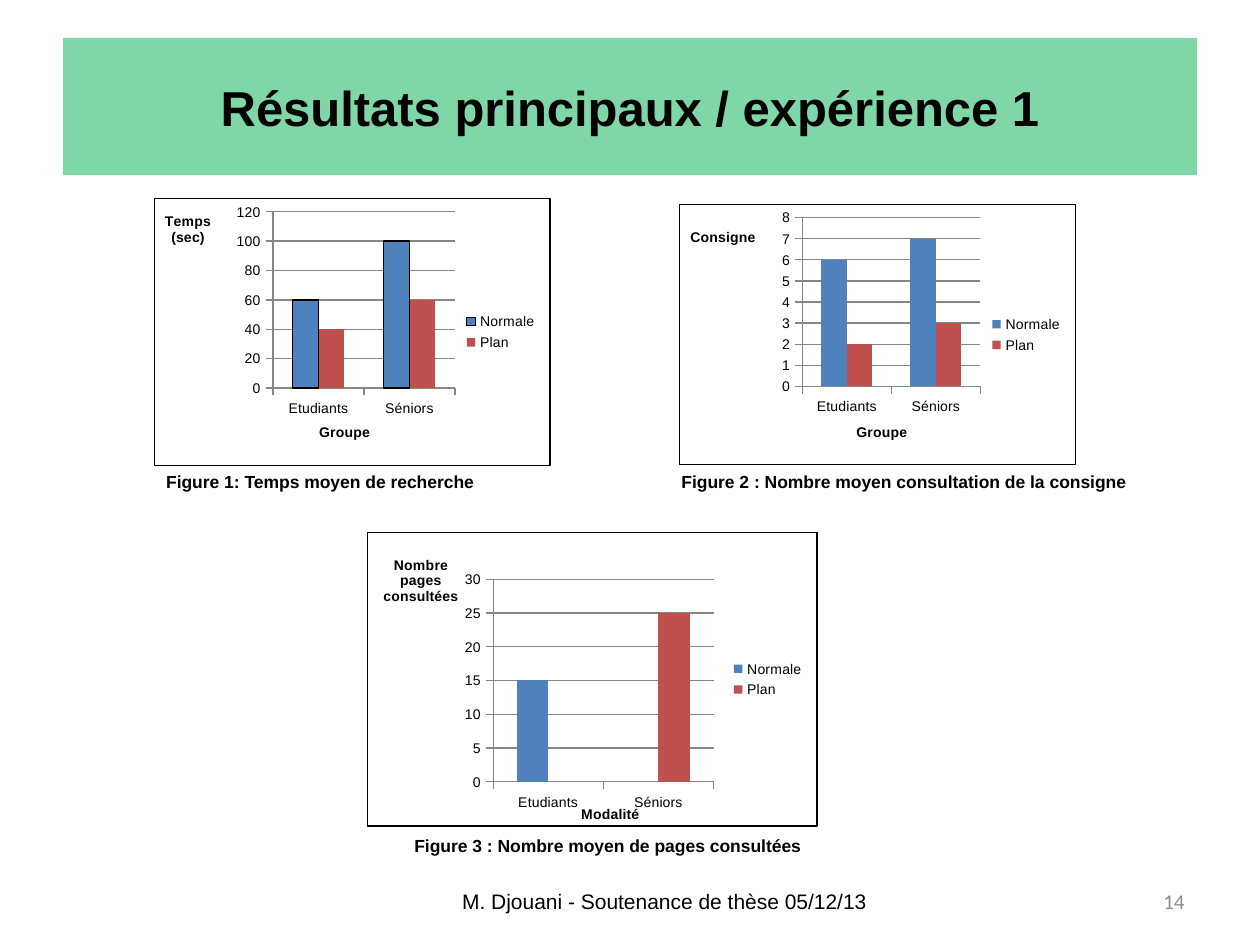
from lxml import etree
from pptx import Presentation
from pptx.chart.data import CategoryChartData
from pptx.dml.color import RGBColor
from pptx.enum.chart import XL_CHART_TYPE, XL_LEGEND_POSITION, XL_TICK_MARK
from pptx.enum.text import MSO_ANCHOR, PP_ALIGN
from pptx.oxml import parse_xml
from pptx.oxml.ns import nsdecls, qn
from pptx.util import Inches, Pt

COLUMNS = XL_CHART_TYPE.COLUMN_CLUSTERED
LEGEND_RIGHT = XL_LEGEND_POSITION.RIGHT
TICK_OUT, TICK_NONE = XL_TICK_MARK.OUTSIDE, XL_TICK_MARK.NONE
TOP, MIDDLE = MSO_ANCHOR.TOP, MSO_ANCHOR.MIDDLE
LEFT, CENTER, RIGHT = PP_ALIGN.LEFT, PP_ALIGN.CENTER, PP_ALIGN.RIGHT

GROUPS = ["Etudiants", "Séniors"]
SERIES_COLORS = {"Normale": "4F81BD", "Plan": "C0504D"}
AXIS_GRAY = "868686"

CHARTS = [
    dict(box=(1.22, 1.57, 3.15, 2.13), values=[(60, 100), (40, 60)],
         plot=(0.3, 0.05, 0.46, 0.66), top=120, step=20, outlined=True,
         value_title=("Temps (sec)", 0.02, 0.04),
         group_title=("Groupe", 0.41, 0.83)),
    dict(box=(5.39, 1.62, 3.15, 2.07), values=[(6, 7), (2, 3)],
         plot=(0.31, 0.05, 0.45, 0.65), top=8, step=1, outlined=False,
         value_title=("Consigne", 0.02, 0.08),
         group_title=("Groupe", 0.44, 0.83)),
    dict(box=(2.91, 4.22, 3.58, 2.34), values=[(15, None), (None, 25)],
         plot=(0.28, 0.16, 0.49, 0.69), top=30, step=5, outlined=False,
         value_title=("Nombre pages consultées", 0.03, 0.07),
         group_title=("Modalité", 0.47, 0.92)),
]

CAPTIONS = [
    ("Figure 1: Temps moyen de recherche", (1.22, 3.69, 3.39, 0.27)),
    ("Figure 2 : Nombre moyen consultation de la consigne",
     (5.31, 3.69, 3.87, 0.27)),
    ("Figure 3 : Nombre moyen de pages consultées",
     (3.19, 6.58, 3.86, 0.27)),
]


def rgb(value):
    return RGBColor.from_string(value)


def set_font(font, color="000000", **values):
    for name, value in {"name": "Arial", **values}.items():
        setattr(font, name, value)
    font.color.rgb = rgb(color)


def set_line(line, color):
    line.color.rgb = rgb(color)
    line.width = Pt(0.75)


def write(tf, text, align, anchor, **font):
    tf.word_wrap = True
    tf.vertical_anchor = anchor
    p = tf.paragraphs[0]
    p.alignment = align
    r = p.add_run()
    r.text = text
    set_font(r.font, **font)


def add_text(s, text, box, align=LEFT, anchor=TOP, **font):
    sp = s.shapes.add_textbox(*map(Inches, box))
    write(sp.text_frame, text, align, anchor, **font)


def format_title(s, text):
    sp = s.shapes.title
    for name, value in zip(("left", "top", "width", "height"),
                           (0.5, 0.3, 9, 1.09)):
        setattr(sp, name, Inches(value))
    sp.fill.solid()
    sp.fill.fore_color.rgb = rgb("00B050")
    color = sp.fill._xPr.find(".//" + qn("a:srgbClr"))
    etree.SubElement(color, qn("a:alpha"), val="50000")
    write(sp.text_frame, text, CENTER, MIDDLE, size=Pt(28), bold=True)


def set_layout(parent, index, x, y, w=None, h=None):
    """Place a chart part by fractions of the chart; w and h mean a plot area."""
    for old in parent.findall(qn("c:layout")):
        parent.remove(old)
    layout = parse_xml(f"<c:layout {nsdecls('c')}/>")
    manual = etree.SubElement(layout, qn("c:manualLayout"))
    values = {"xMode": "edge", "yMode": "edge", "x": x, "y": y}
    if w:
        values = {"layoutTarget": "inner", **values, "w": w, "h": h}
    for name, value in values.items():
        etree.SubElement(manual, qn("c:" + name), val=str(value))
    parent.insert(index, layout)


def format_axis(axis, text, x, y):
    axis.major_tick_mark = TICK_OUT
    axis.minor_tick_mark = TICK_NONE
    set_line(axis.format.line, AXIS_GRAY)
    title = axis.axis_title
    tf = title.text_frame
    tf.text = text
    set_font(tf.paragraphs[0].runs[0].font, size=Pt(8), bold=True)
    body = title._element.find(".//" + qn("a:bodyPr"))
    body.set("rot", "0")
    body.set("vert", "horz")
    set_layout(title._element, 1, x, y)


def add_border(chart):
    border = parse_xml(
        f'<c:spPr {nsdecls("c", "a")}><a:noFill/><a:ln w="9525"><a:solidFill>'
        '<a:srgbClr val="000000"/></a:solidFill></a:ln></c:spPr>')
    chart._chartSpace.find(qn("c:txPr")).addprevious(border)


def add_column_chart(s, box, values, plot, top, step, outlined,
                     value_title, group_title):
    data = CategoryChartData()
    data.categories = GROUPS
    for name, numbers in zip(SERIES_COLORS, values):
        data.add_series(name, numbers)
    chart = s.shapes.add_chart(COLUMNS, *map(Inches, box), data).chart
    chart.has_title = False
    set_font(chart.font, size=Pt(8))
    add_border(chart)
    chart.has_legend = True
    chart.legend.position = LEGEND_RIGHT
    chart.legend.include_in_layout = False
    columns = chart.plots[0]
    columns.gap_width = 150
    columns.vary_by_categories = False
    for series, color in zip(columns.series, SERIES_COLORS.values()):
        series.format.fill.solid()
        series.format.fill.fore_color.rgb = rgb(color)
    if outlined:
        set_line(columns.series[0].format.line, "000000")
    format_axis(chart.category_axis, *group_title)
    axis = chart.value_axis
    format_axis(axis, *value_title)
    axis.minimum_scale, axis.maximum_scale, axis.major_unit = 0, top, step
    set_line(axis.major_gridlines.format.line, AXIS_GRAY)
    set_layout(chart._chartSpace.find(".//" + qn("c:plotArea")), 0, *plot)


def main():
    prs = Presentation()
    prs.slide_width, prs.slide_height = Inches(10), Inches(7.5)
    s = prs.slides.add_slide(prs.slide_layouts[5])
    format_title(s, "Résultats principaux / expérience 1")
    for chart in CHARTS:
        add_column_chart(s, **chart)
    for text, box in CAPTIONS:
        add_text(s, text, box, size=Pt(10), bold=True)
    add_text(s, "M. Djouani - Soutenance de thèse 05/12/13",
             (3.42, 6.95, 3.71, 0.4), CENTER, MIDDLE, size=Pt(12))
    add_text(s, "14", (7.17, 6.95, 2.33, 0.4), RIGHT, MIDDLE,
             name="Calibri", size=Pt(12), color="8C8C8C")
    prs.save("out.pptx")


if __name__ == "__main__":
    main()
